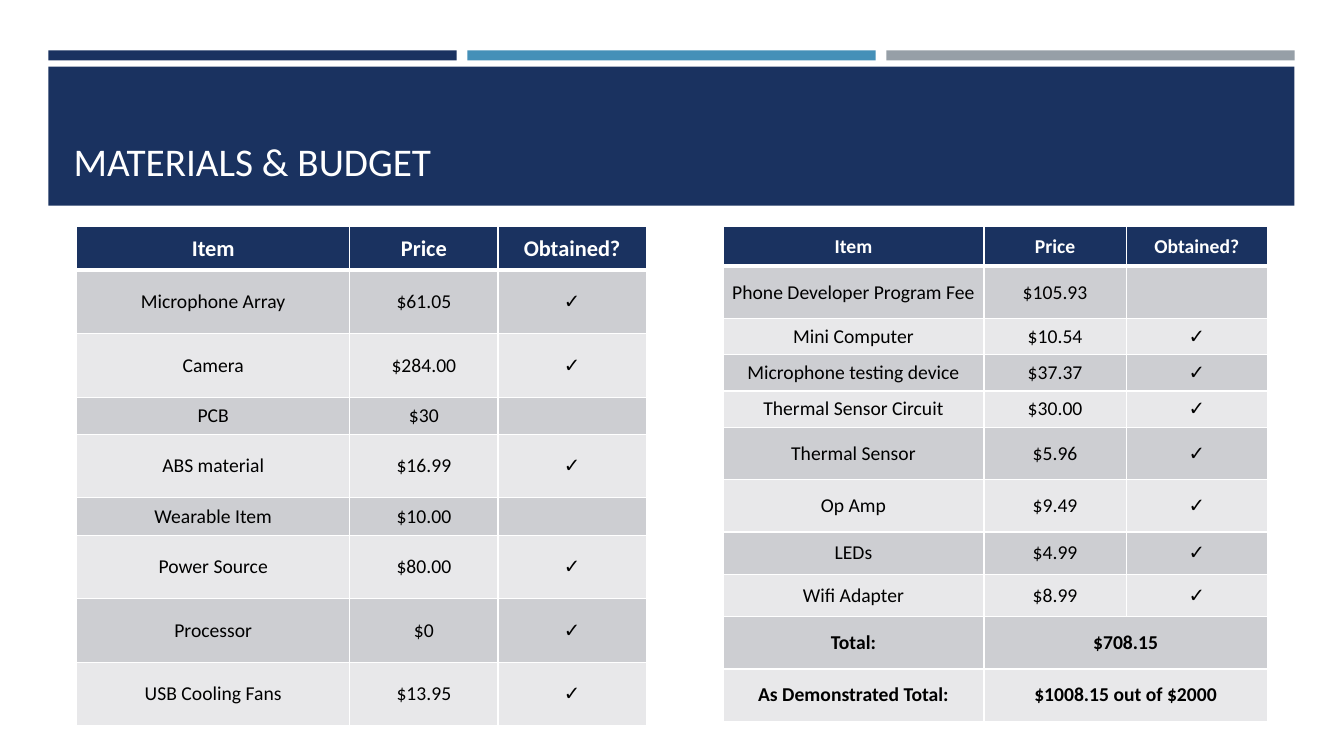
from lxml import etree
from pptx import Presentation
from pptx.dml.color import RGBColor
from pptx.enum.shapes import MSO_SHAPE
from pptx.enum.text import MSO_ANCHOR, MSO_AUTO_SIZE, PP_ALIGN
from pptx.oxml.ns import qn
from pptx.util import Inches, Pt

NAVY = RGBColor(0x1A, 0x32, 0x60)
BLUE = RGBColor(0x45, 0x90, 0xB8)
GRAY = RGBColor(0x96, 0x9F, 0xA7)
DARK_BAND = RGBColor(0xCD, 0xCE, 0xD2)
LIGHT_BAND = RGBColor(0xE8, 0xE8, 0xEA)
WHITE = RGBColor(0xFF, 0xFF, 0xFF)
BLACK = RGBColor(0, 0, 0)
FONT = "Calibri"
RECTANGLE = MSO_SHAPE.RECTANGLE
LEFT, CENTER = PP_ALIGN.LEFT, PP_ALIGN.CENTER
BOTTOM, MIDDLE = MSO_ANCHOR.BOTTOM, MSO_ANCHOR.MIDDLE
NO_AUTOFIT = MSO_AUTO_SIZE.NONE
TITLE_ONLY = 5

HEADER = ("Item", "Price", "Obtained?")
DEVICE_ROWS = [
    HEADER,
    ("Microphone Array", "$61.05", "✓"),
    ("Camera", "$284.00", "✓"),
    ("PCB", "$30", ""),
    ("ABS material", "$16.99", "✓"),
    ("Wearable Item", "$10.00", ""),
    ("Power Source", "$80.00", "✓"),
    ("Processor", "$0", "✓"),
    ("USB Cooling Fans", "$13.95", "✓"),
]
SENSOR_ROWS = [
    HEADER,
    ("Phone Developer Program Fee", "$105.93", ""),
    ("Mini Computer", "$10.54", "✓"),
    ("Microphone testing device", "$37.37", "✓"),
    ("Thermal Sensor Circuit", "$30.00", "✓"),
    ("Thermal Sensor", "$5.96", "✓"),
    ("Op Amp", "$9.49", "✓"),
    ("LEDs", "$4.99", "✓"),
    ("Wifi Adapter", "$8.99", "✓"),
    ("Total:", "$708.15"),
    ("As Demonstrated Total:", "$1008.15 out of $2000"),
]
DEVICE_HEIGHTS = [0.43, 0.63, 0.63, 0.37, 0.63, 0.37, 0.63, 0.63, 0.63]
SENSOR_HEIGHTS = [0.39, 0.52, 0.36, 0.36, 0.36, 0.52, 0.52, 0.42, 0.42, 0.52, 0.52]


def write_text(text_frame, text, *, size, color, bold=False, align=CENTER):
    """Put one formatted run in the first paragraph of a text frame."""
    paragraph = text_frame.paragraphs[0]
    paragraph.alignment = align
    run = paragraph.add_run()
    run.text = text
    run.font.name = FONT
    run.font.size = Pt(size)
    run.font.bold = bold
    run.font.color.rgb = color


def add_bar(slide, left, top, width, height, color):
    """Add a plain filled rectangle."""
    bar = slide.shapes.add_shape(
        RECTANGLE, Inches(left), Inches(top), Inches(width), Inches(height))
    bar.shadow.inherit = False
    bar.fill.solid()
    bar.fill.fore_color.rgb = color
    bar.line.fill.background()


def add_banner(slide, text, left, top, width, height):
    """Add the three accent bars, the title band and the title in a box."""
    bar_width, gap = 4.05, 0.105
    for index, color in enumerate((NAVY, BLUE, GRAY)):
        add_bar(slide, left + index * (bar_width + gap), top, bar_width, 0.1, color)
    band_top = top + 0.16
    add_bar(slide, left, band_top, width, height - 0.16, NAVY)
    title = slide.shapes.title
    title.left, title.top = Inches(left + 0.15), Inches(band_top + 0.14)
    title.width, title.height = Inches(width - 0.3), Inches(1.08)
    title.text_frame.auto_size = NO_AUTOFIT
    title.text_frame.vertical_anchor = BOTTOM
    write_text(title.text_frame, text, size=28, color=WHITE, align=LEFT)
    slide.shapes.element.append(title.element)


def set_borders(cell, top, bottom):
    """Give a cell white borders with the given top and bottom widths in points."""
    properties = cell._tc.get_or_add_tcPr()
    for tag, width in (("a:lnL", 1), ("a:lnR", 1), ("a:lnT", top), ("a:lnB", bottom)):
        line = etree.SubElement(properties, qn(tag), w=str(Pt(width)))
        fill = etree.SubElement(line, qn("a:solidFill"))
        etree.SubElement(fill, qn("a:srgbClr"), val=str(WHITE))


def format_cell(cell, text, row_index, *, size, bold):
    """Fill, border and write one cell according to its row."""
    is_header = row_index == 0
    set_borders(cell, 3 if row_index == 1 else 1, 3 if is_header else 1)
    cell.fill.solid()
    band = DARK_BAND if row_index % 2 else LIGHT_BAND
    cell.fill.fore_color.rgb = NAVY if is_header else band
    cell.margin_left = cell.margin_right = Inches(0.06 if is_header else 0.05)
    cell.margin_top = cell.margin_bottom = Inches(0.03)
    cell.vertical_anchor = MIDDLE
    write_text(cell.text_frame, text, size=size, bold=bold,
               color=WHITE if is_header else BLACK)


def add_budget_table(slide, rows, left, top, widths, heights, header_size):
    """Add a banded table; a row of two texts merges its last two columns."""
    table = slide.shapes.add_table(
        len(rows), len(widths), Inches(left), Inches(top),
        Inches(sum(widths)), Inches(sum(heights))).table
    for column, width in zip(table.columns, widths):
        column.width = Inches(width)
    for row_index, (texts, height) in enumerate(zip(rows, heights)):
        table.rows[row_index].height = Inches(height)
        is_total = len(texts) < len(widths)
        if is_total:
            table.cell(row_index, 1).merge(table.cell(row_index, 2))
        for column_index, text in enumerate(texts):
            format_cell(table.cell(row_index, column_index), text, row_index,
                        size=14 if row_index else header_size,
                        bold=row_index == 0 or is_total)


def main():
    """Build the materials and budget slide and save it."""
    presentation = Presentation()
    presentation.slide_width, presentation.slide_height = Inches(13.33), Inches(7.5)
    slide = presentation.slides.add_slide(presentation.slide_layouts[TITLE_ONLY])
    add_banner(slide, "MATERIALS & BUDGET", 0.48, 0.5, 12.36, 1.54)
    add_budget_table(slide, DEVICE_ROWS, 0.76, 2.25, (2.71, 1.47, 1.47),
                     DEVICE_HEIGHTS, header_size=16)
    add_budget_table(slide, SENSOR_ROWS, 7.17, 2.25, (2.59, 1.41, 1.4),
                     SENSOR_HEIGHTS, header_size=14)
    presentation.save("out.pptx")


if __name__ == "__main__":
    main()
